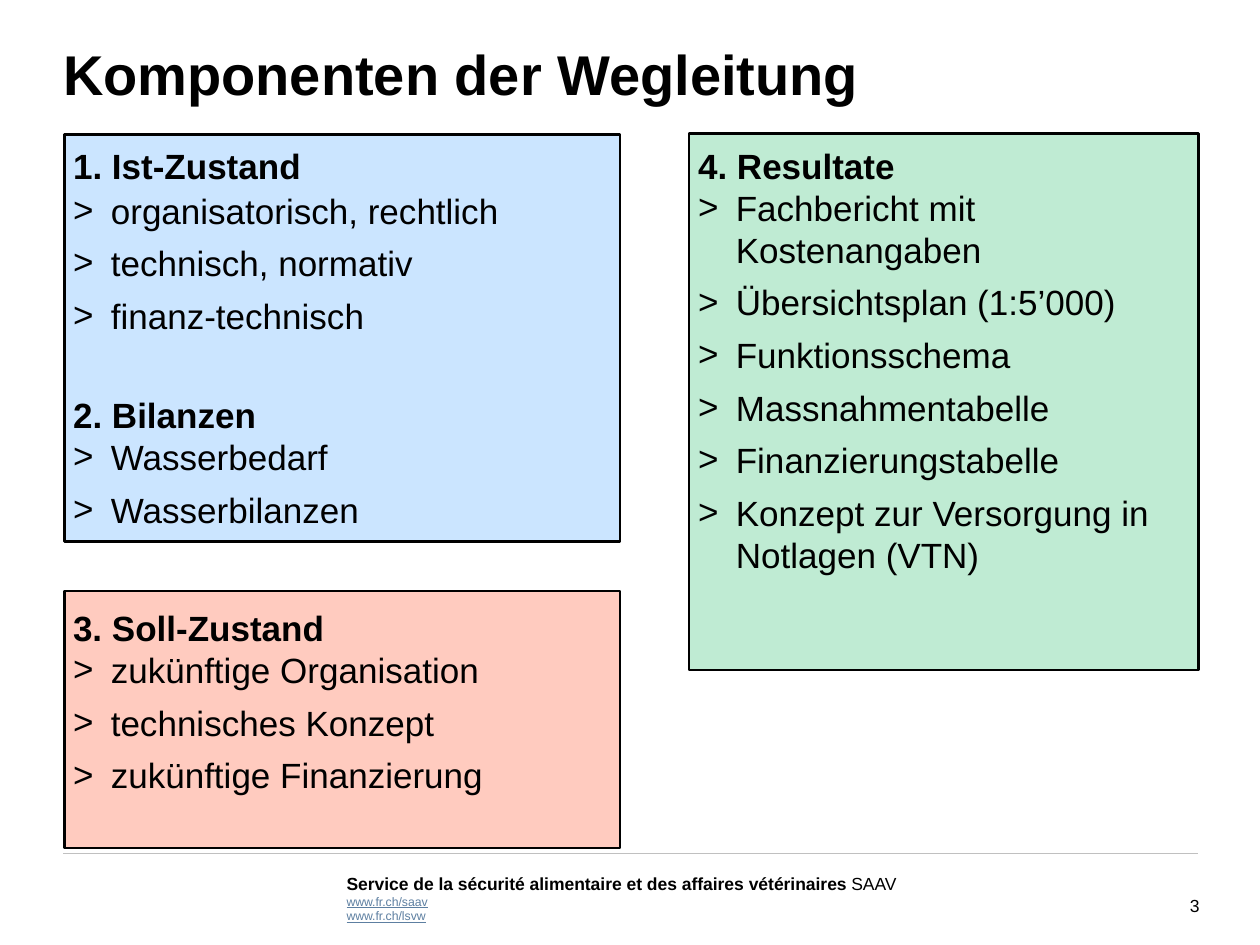
from lxml.etree import SubElement
from pptx import Presentation
from pptx.dml.color import RGBColor
from pptx.enum.shapes import MSO_CONNECTOR, MSO_SHAPE
from pptx.enum.text import PP_ALIGN
from pptx.oxml.ns import qn
from pptx.util import Inches, Pt

BLACK = RGBColor(0x00, 0x00, 0x00)
BLUE = RGBColor(0x33, 0x99, 0xFF)
RED = RGBColor(0xFF, 0x33, 0x00)
GREEN = RGBColor(0x00, 0xB0, 0x50)
LINK = RGBColor(0x5D, 0x7F, 0xA1)
RULE = RGBColor(0xC0, 0xC0, 0xC0)

FONT = "Arial"
LEFT, RIGHT = 0.5, 9.51
LEFT_TEXT, RIGHT_TEXT = 0.58, 5.54
HEADING_HEIGHT = 0.34
BULLET_INDENT = 0.3

TITLE = "Komponenten der Wegleitung"
PANELS = [
    (GREEN, (5.47, 1.06, 4.04, 4.26)),
    (BLUE, (0.51, 1.07, 4.41, 3.23)),
    (RED, (0.51, 4.69, 4.41, 2.04)),
]
SECTIONS = [
    ("1. Ist-Zustand", (LEFT_TEXT, 1.15, 3.72), 1.5, 1.18,
     ["organisatorisch, rechtlich", "technisch, normativ", "finanz-technisch"]),
    ("2. Bilanzen", (LEFT_TEXT, 3.12, 3.72), 3.46, 0.76,
     ["Wasserbedarf", "Wasserbilanzen"]),
    ("3. Soll-Zustand", (LEFT_TEXT, 4.81, 4.26), 5.15, 1.18,
     ["zukünftige Organisation", "technisches Konzept", "zukünftige Finanzierung"]),
    ("4. Resultate", (RIGHT_TEXT, 1.15, 3.79), 1.48, 3.53,
     ["Fachbericht mit Kostenangaben", "Übersichtsplan (1:5’000)",
      "Funktionsschema", "Massnahmentabelle", "Finanzierungstabelle",
      "Konzept zur Versorgung in Notlagen (VTN)"]),
]
SERVICE = [
    ("Service de la sécurité alimentaire et des affaires vétérinaires ", {"bold": True}),
    ("SAAV", {}),
]
LINKS = ["www.fr.ch/saav", "www.fr.ch/lsvw"]
PAGE_NUMBER = "3"


def add_run(paragraph, text, size, color=BLACK, **formats):
    run = paragraph.add_run()
    run.text = text
    for name, value in {"name": FONT, "size": Pt(size), **formats}.items():
        setattr(run.font, name, value)
    run.font.color.rgb = color


def add_paragraphs(slide, place, count):
    frame = slide.shapes.add_textbox(*map(Inches, place)).text_frame
    for name in ("margin_left", "margin_top", "margin_right", "margin_bottom"):
        setattr(frame, name, 0)
    frame.word_wrap = True
    for _ in range(count - 1):
        frame.add_paragraph()
    return frame.paragraphs


def add_bullet(paragraph):
    properties = paragraph._p.get_or_add_pPr()
    properties.set("marL", str(Inches(BULLET_INDENT)))
    properties.set("indent", str(-Inches(BULLET_INDENT)))
    color = SubElement(properties, qn("a:buClr"))
    SubElement(color, qn("a:srgbClr"), val=str(BLACK))
    SubElement(properties, qn("a:buFont"), typeface=FONT)
    SubElement(properties, qn("a:buChar"), char=">")


def add_panel(slide, color, place):
    panel = slide.shapes.add_shape(MSO_SHAPE.RECTANGLE, *map(Inches, place))
    panel.shadow.inherit = False
    panel.fill.solid()
    panel.fill.fore_color.rgb = color
    tint = panel._element.spPr.find(qn("a:solidFill")).find(qn("a:srgbClr"))
    SubElement(tint, qn("a:alpha"), val="25000")
    panel.line.color.rgb = BLACK
    panel.line.width = Pt(1.5)


def add_section(slide, heading, heading_place, list_top, list_height, items):
    left, top, width = heading_place
    [title] = add_paragraphs(slide, (left, top, width, HEADING_HEIGHT), 1)
    add_run(title, heading, 20, bold=True)
    entries = add_paragraphs(slide, (left, list_top, width, list_height), len(items))
    for entry, item in zip(entries, items):
        entry.space_after = Pt(6)
        add_bullet(entry)
        add_run(entry, item, 20)


def add_footer(slide):
    rule = slide.shapes.add_connector(
        MSO_CONNECTOR.STRAIGHT, *map(Inches, (LEFT, 6.77, RIGHT, 6.77)))
    rule.line.color.rgb = RULE
    rule.line.width = Pt(0.25)
    SubElement(rule._element.spPr, qn("a:effectLst"))

    service, *addresses = add_paragraphs(slide, (2.75, 6.91, 5.25, 0.5), 1 + len(LINKS))
    service.line_spacing = Pt(13.4)
    for text, formats in SERVICE:
        add_run(service, text, 10, **formats)
    for address, text in zip(addresses, LINKS):
        add_run(address, text, 7, LINK, underline=True)

    [number] = add_paragraphs(slide, (9.08, 7.1, 0.44, 0.17), 1)
    number.alignment = PP_ALIGN.RIGHT
    add_run(number, PAGE_NUMBER, 10)


def main():
    deck = Presentation()
    deck.slide_width, deck.slide_height = Inches(10), Inches(7.5)
    slide = deck.slides.add_slide(deck.slide_layouts[6])
    add_footer(slide)
    for panel in PANELS:
        add_panel(slide, *panel)
    [title] = add_paragraphs(slide, (LEFT, 0.33, RIGHT - LEFT, 0.52), 1)
    title.line_spacing = Pt(37)
    add_run(title, TITLE, 32, bold=True)
    for section in SECTIONS:
        add_section(slide, *section)
    deck.save("out.pptx")


if __name__ == "__main__":
    main()
